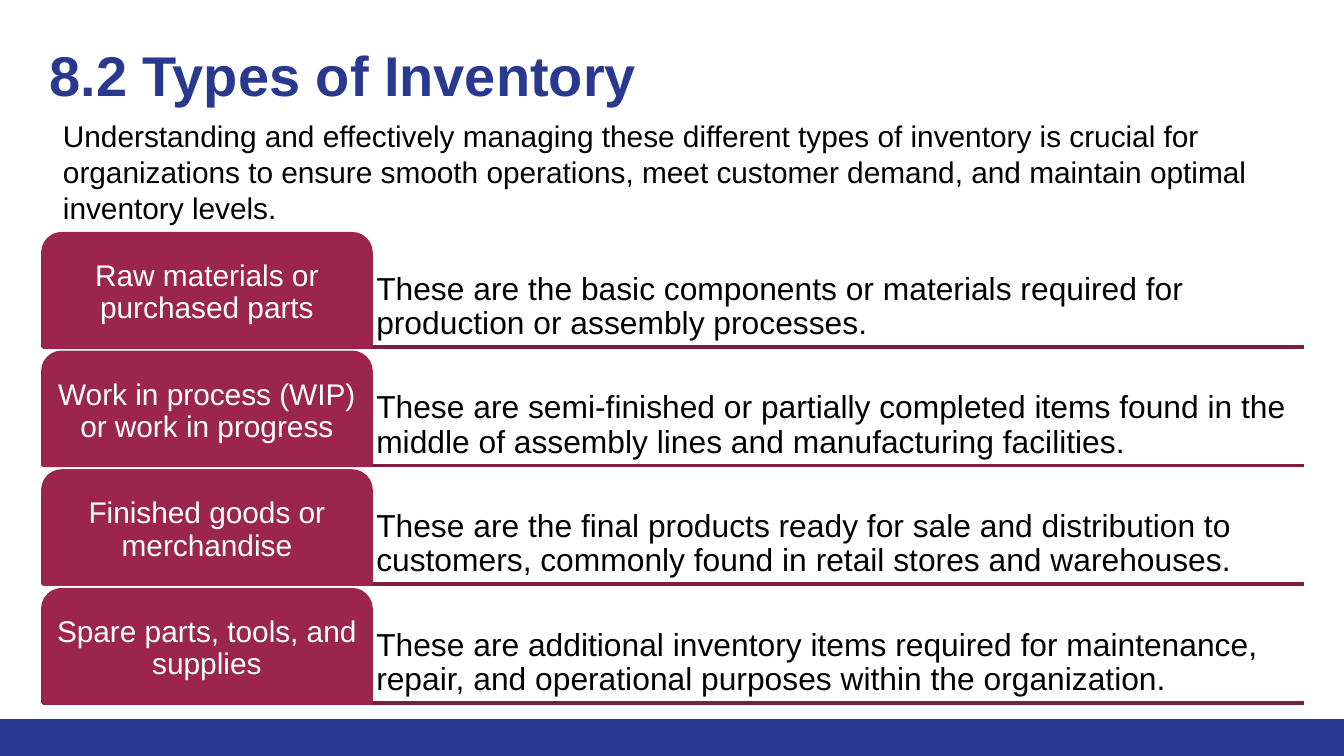
from lxml import etree
from pptx import Presentation
from pptx.dml.color import RGBColor
from pptx.enum.shapes import MSO_CONNECTOR, MSO_SHAPE
from pptx.enum.text import MSO_ANCHOR, PP_ALIGN
from pptx.oxml.ns import qn
from pptx.util import Inches, Pt

RECT = MSO_SHAPE.RECTANGLE
TAB = MSO_SHAPE.ROUND_2_SAME_RECTANGLE
STRAIGHT = MSO_CONNECTOR.STRAIGHT
TOP, MIDDLE, BOTTOM = MSO_ANCHOR.TOP, MSO_ANCHOR.MIDDLE, MSO_ANCHOR.BOTTOM
LEFT, CENTER = PP_ALIGN.LEFT, PP_ALIGN.CENTER

BLUE, WINE, DARK = "2A3990", "9C254D", "7D1E3E"
BLACK, WHITE = "000000", "FFFFFF"

TITLE = "8.2 Types of Inventory"
INTRO = (
    "Understanding and effectively managing these different types of inventory "
    "is crucial for organizations to ensure smooth operations, meet customer "
    "demand, and maintain optimal inventory levels."
)
TYPES = [
    ("Raw materials or purchased parts",
     "These are the basic components or materials required for production "
     "or assembly processes."),
    ("Work in process (WIP) or work in progress",
     "These are semi-finished or partially completed items found in the middle "
     "of assembly lines and manufacturing facilities."),
    ("Finished goods or merchandise",
     "These are the final products ready for sale and distribution to customers, "
     "commonly found in retail stores and warehouses."),
    ("Spare parts, tools, and supplies",
     "These are additional inventory items required for maintenance, repair, "
     "and operational purposes within the organization."),
]
START, STEP, TALL = 1.74, 0.883, 0.84
EDGE, SPLIT, END = 0.32, 2.76, 9.7


def color(code):
    return RGBColor.from_string(code)


def add_box(slide, kind, place, fill):
    box = slide.shapes.add_shape(kind, *map(Inches, place))
    box.shadow.inherit = False
    box.fill.solid()
    box.fill.fore_color.rgb = color(fill)
    box.line.fill.background()
    return box


def add_text(slide, text, place, size, tint=BLACK, bold=False, anchor=TOP,
             align=LEFT, inset=(0.1, 0.05), space=None):
    frame = slide.shapes.add_textbox(*map(Inches, place)).text_frame
    frame.word_wrap = True
    frame.vertical_anchor = anchor
    frame.margin_left = frame.margin_right = Inches(inset[0])
    frame.margin_top = frame.margin_bottom = Inches(inset[1])
    frame.text = text
    para = frame.paragraphs[0]
    para.alignment = align
    para.line_spacing = space
    font = para.runs[0].font
    font.name = "Arial"
    font.size = Pt(size)
    font.bold = bold
    font.color.rgb = color(tint)


def add_rule(slide, y):
    rule = slide.shapes.add_connector(
        STRAIGHT, Inches(EDGE), Inches(y), Inches(END), Inches(y))
    rule.line.color.rgb = color(DARK)
    rule.line.width = Pt(2)
    props = rule._element.spPr
    etree.SubElement(props, qn("a:effectLst"))


def add_type(slide, top, label, detail):
    add_text(slide, detail, (SPLIT, top, END - SPLIT, TALL), 17,
             anchor=BOTTOM, inset=(0.04, 0.04), space=0.9)
    tab = add_box(slide, TAB, (EDGE, top, SPLIT - EDGE, TALL), WINE)
    tab.line.color.rgb = color(WINE)
    tab.line.width = Pt(2)
    add_text(slide, label, (EDGE + 0.04, top + 0.04, 2.36, 0.8), 16, WHITE,
             anchor=MIDDLE, align=CENTER, inset=(0.03, 0.03), space=0.9)


def main():
    deck = Presentation()
    deck.slide_width, deck.slide_height = Inches(10), Inches(5.625)
    slide = deck.slides.add_slide(deck.slide_layouts[6])
    add_box(slide, RECT, (0, 5.35, 10, 0.28), BLUE)
    add_text(slide, TITLE, (0.27, 0.2, 9.48, 0.89), 30, BLUE, bold=True,
             inset=(0.1, 0.1))
    tops = [START + STEP * i for i in range(len(TYPES))]
    for top in tops:
        add_rule(slide, top + TALL)
    for top, (label, detail) in zip(tops, TYPES):
        add_type(slide, top, label, detail)
    add_text(slide, INTRO, (0.37, 0.83, 9.38, 0.91), 16)
    deck.save("out.pptx")


if __name__ == "__main__":
    main()
